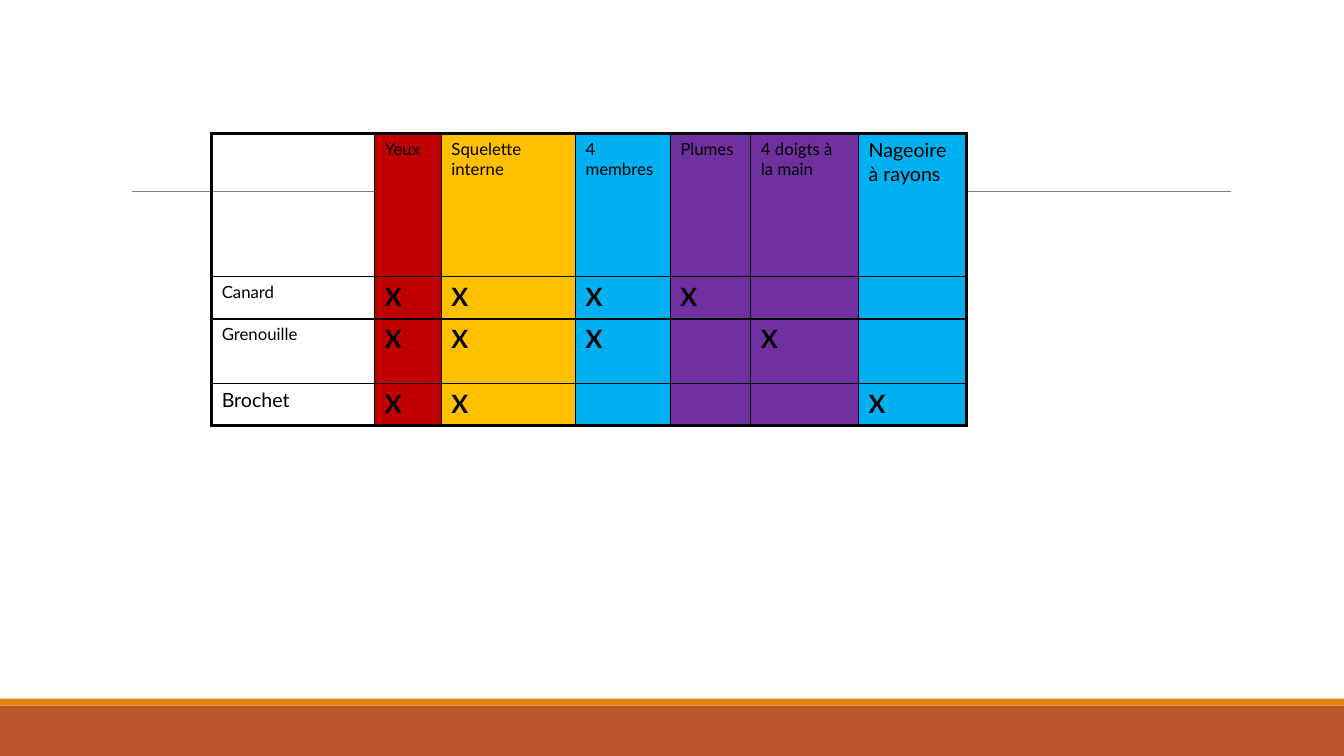
"""Build a slide with a table of animals and the attributes they share."""
import lxml.etree
import pptx
import pptx.dml.color
import pptx.enum.shapes
import pptx.oxml.ns
import pptx.util
from dataclasses import dataclass

Pt = pptx.util.Pt
RGB = pptx.dml.color.RGBColor.from_string
qn = pptx.oxml.ns.qn


@dataclass(frozen=True)
class Theme:
    font: str = "Lato"
    ink: str = "000000"
    rule: str = "808080"
    band: str = "BD582C"
    stripe: str = "E48312"
    red: str = "C00000"
    gold: str = "FFC000"
    blue: str = "00B0F0"
    purple: str = "7030A0"
    label_size: float = 12
    large_label_size: float = 14
    mark_size: float = 18
    outer_border: float = 2.25
    inner_border: float = 1


theme = Theme()


def add_border(cell, side, width):
    """Draw one side of a cell; call before the cell is filled."""
    properties = cell._tc.get_or_add_tcPr()
    line = lxml.etree.SubElement(properties, qn(f"a:ln{side}"), w=str(Pt(width)))
    solid = lxml.etree.SubElement(line, qn("a:solidFill"))
    lxml.etree.SubElement(solid, qn("a:srgbClr"), val=theme.ink)


deck = pptx.Presentation()
deck.slide_width = Pt(960)
deck.slide_height = Pt(540)
page = deck.slides.add_slide(deck.slide_layouts[6])

for top, height, color in [(504, 36, theme.band), (499, 5, theme.stripe)]:
    bar = page.shapes.add_shape(
        pptx.enum.shapes.MSO_SHAPE.RECTANGLE, 0, Pt(top), deck.slide_width, Pt(height))
    bar.shadow.inherit = False
    bar.fill.solid()
    bar.fill.fore_color.rgb = RGB(color)
    bar.line.fill.background()

title_rule = page.shapes.add_connector(
    pptx.enum.shapes.MSO_CONNECTOR.STRAIGHT, Pt(94.3), Pt(136.8), Pt(879), Pt(136.8))
title_rule.line.color.rgb = RGB(theme.rule)
title_rule.line.width = Pt(0.5)
lxml.etree.SubElement(title_rule._element.spPr, qn("a:effectLst"))

attributes = [
    ("", 116.6, None),
    ("Yeux", 47.5, theme.red),
    ("Squelette interne", 95.8, theme.gold),
    ("4 membres", 67.7, theme.blue),
    ("Plumes", 57.6, theme.purple),
    ("4 doigts à la main", 77, theme.purple),
    ("Nageoire à rayons", 77, theme.blue),
]
animals = [
    ("Canard", 30.2, {1, 2, 3, 4}),
    ("Grenouille", 46.1, {1, 2, 3, 5}),
    ("Brochet", 30.2, {1, 2, 6}),
]
large_labels = {"Nageoire à rayons", "Brochet"}
header_height = 102.2
heights = [header_height] + [height for _, height, _ in animals]
widths = [width for _, width, _ in attributes]
texts = [[name for name, _, _ in attributes]]
for animal, _, marks in animals:
    texts.append([animal] + ["X" if column in marks else ""
                             for column in range(1, len(attributes))])

frame = page.shapes.add_table(
    len(heights), len(widths), Pt(151.2), Pt(95.4), Pt(sum(widths)), Pt(sum(heights)))
table = frame.table
table.first_row = False
table.horz_banding = False
for column, width in zip(table.columns, widths):
    column.width = Pt(width)
for row, height in zip(table.rows, heights):
    row.height = Pt(height)

for row_index, row_texts in enumerate(texts):
    for column_index, text in enumerate(row_texts):
        cell = table.cell(row_index, column_index)
        edges = {
            "L": column_index == 0,
            "R": column_index == len(widths) - 1,
            "T": row_index == 0,
            "B": row_index == len(heights) - 1,
        }
        for side, is_outer in edges.items():
            add_border(cell, side, theme.outer_border if is_outer else theme.inner_border)
        color = attributes[column_index][2]
        if color:
            cell.fill.solid()
            cell.fill.fore_color.rgb = RGB(color)
        else:
            cell.fill.background()
        if not text:
            continue
        span = cell.text_frame.paragraphs[0].add_run()
        span.text = text
        span.font.name = theme.font
        span.font.color.rgb = RGB(theme.ink)
        span.font.bold = text == "X"
        if text == "X":
            span.font.size = Pt(theme.mark_size)
        elif text in large_labels:
            span.font.size = Pt(theme.large_label_size)
        else:
            span.font.size = Pt(theme.label_size)

deck.save("out.pptx")
